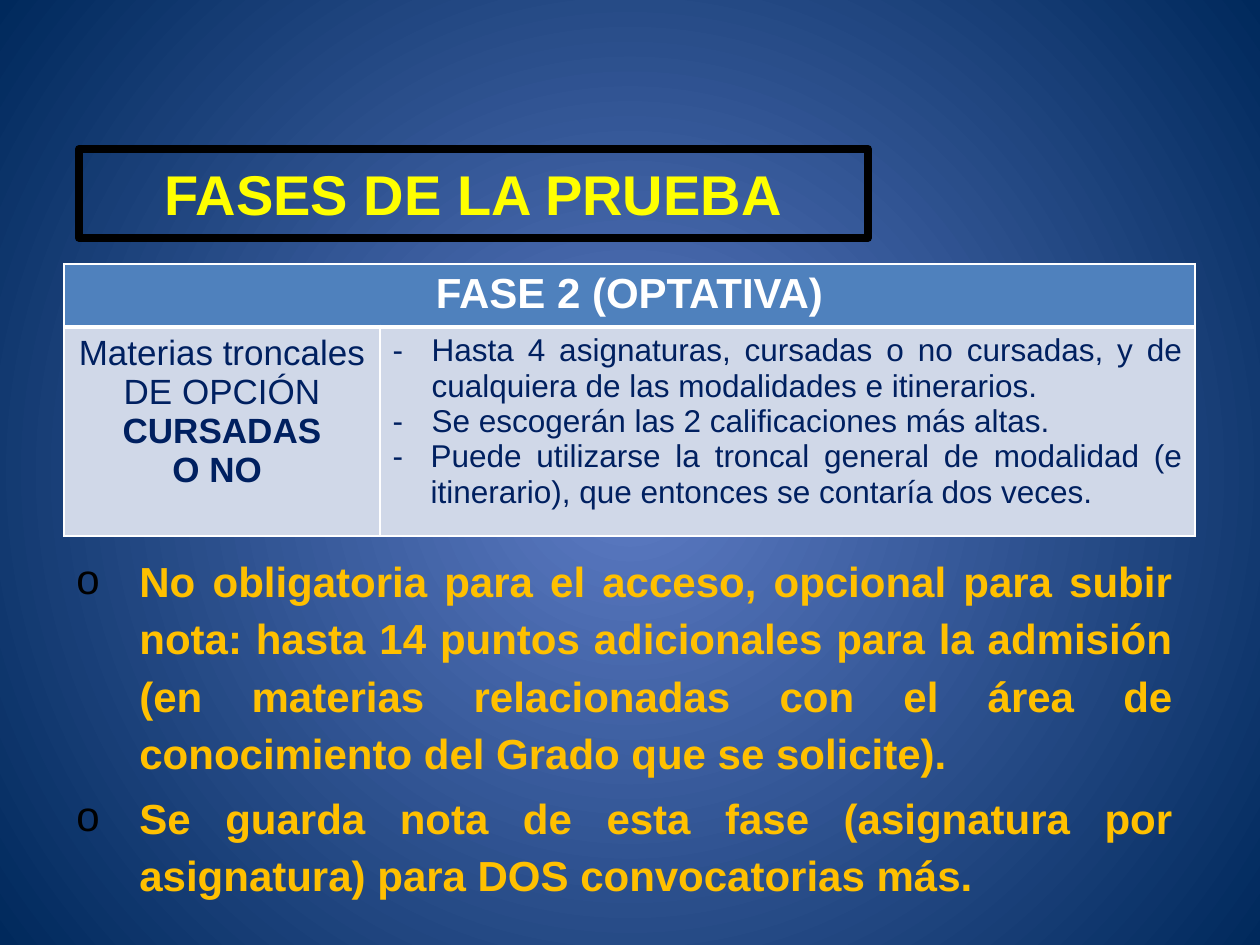
"""Build the slide on the optional second phase of the exam."""
from lxml.etree import SubElement as Sub
from pptx import Presentation
from pptx.dml.color import RGBColor as RGB
from pptx.enum.text import MSO_ANCHOR as Anchor, MSO_AUTO_SIZE as Fit, PP_ALIGN as Align
from pptx.oxml.ns import qn
from pptx.util import Pt

PX = 914400 // 126
FONT = "Arial"
HUE = {"glow": "5E7CC5", "edge": "00295C", "title": "FFFF00", "line": "000000",
       "head": "4F81BD", "cell": "D0D8E8", "white": "FFFFFF", "navy": "002060",
       "gold": "FFC000"}

TITLE = "FASES DE LA PRUEBA"
HEAD = "FASE 2 (OPTATIVA)"
TOPICS = [("Materias troncales DE OPCIÓN", False), ("CURSADAS", True), ("O NO ", True)]
RULES = [
    ("Hasta 4 asignaturas, cursadas o no cursadas, y de cualquiera de las "
     "modalidades e itinerarios.", 39),
    ("Se escogerán las 2 calificaciones más altas.", 39),
    ("Puede utilizarse la troncal general de modalidad (e itinerario), que "
     "entonces se contaría dos veces.", 38),
]
NOTES = [
    "No obligatoria para el acceso, opcional para subir nota: hasta 14 puntos "
    "adicionales para la admisión (en materias relacionadas con el área de "
    "conocimiento del Grado que se solicite).",
    "Se guarda nota de esta fase (asignatura por asignatura) para DOS "
    "convocatorias más.",
]
TITLE_BOX = (79, 149, 789, 89)
NOTE_BOX = (64, 542, 1121, 368)
LEFT, TOP = 64, 264
COLS, ROWS = (316, 815), (63, 209)


def emu(box):
    return [n * PX for n in box]


def rgb(name):
    return RGB.from_string(HUE[name])


def write(para, text, size, hue, bold, align=Align.CENTER):
    para.alignment = align
    run = para.add_run()
    run.text = text
    font = run.font
    font.name, font.size, font.bold = FONT, Pt(size), bold
    font.color.rgb = rgb(hue)


def lines(frame, count):
    return [frame.paragraphs[0]] + [frame.add_paragraph() for _ in range(count - 1)]


def bullet(para, mark, indent, hue=None):
    props = para._p.get_or_add_pPr()
    props.set("marL", str(indent * PX))
    props.set("indent", str(-indent * PX))
    if hue:
        Sub(Sub(props, qn("a:buClr")), qn("a:srgbClr"), val=HUE[hue])
    Sub(props, qn("a:buFont"), typeface=FONT)
    Sub(props, qn("a:buChar"), char=mark)


def paint(cell, hue, top, bottom):
    props = cell._tc.get_or_add_tcPr()
    for side, width in (("L", 1), ("R", 1), ("T", top), ("B", bottom)):
        line = Sub(props, qn("a:ln" + side), w=str(Pt(width)))
        Sub(Sub(line, qn("a:solidFill")), qn("a:srgbClr"), val=HUE["white"])
    cell.fill.solid()
    cell.fill.fore_color.rgb = rgb(hue)


def add_back(slide):
    fill = slide.background.fill
    fill.gradient()
    for stop, hue, place in zip(fill.gradient_stops, ("glow", "edge"), (0, 1)):
        stop.color.rgb, stop.position = rgb(hue), place
    grad = slide._element.find(".//" + qn("a:gradFill"))
    grad.remove(grad.find(qn("a:lin")))
    ring = Sub(grad, qn("a:path"), {"path": "circle"})
    Sub(ring, qn("a:fillToRect"), {side: "50000" for side in "ltrb"})


def add_title(slide):
    title = slide.shapes.title
    title.left, title.top, title.width, title.height = emu(TITLE_BOX)
    shape = Sub(title._element.spPr, qn("a:prstGeom"), prst="flowChartAlternateProcess")
    Sub(shape, qn("a:avLst"))
    title.fill.background()
    title.line.color.rgb, title.line.width = rgb("line"), Pt(4.5)
    frame = title.text_frame
    frame.auto_size, frame.vertical_anchor = Fit.NONE, Anchor.MIDDLE
    write(frame.paragraphs[0], TITLE, 32, "title", True)


def add_grid(slide):
    box = emu((LEFT, TOP, sum(COLS), sum(ROWS)))
    table = slide.shapes.add_table(len(ROWS), len(COLS), *box).table
    table.horz_banding = False
    for col, width in zip(table.columns, COLS):
        col.width = width * PX
    for row, height in zip(table.rows, ROWS):
        row.height = height * PX
    for row, look in zip(table.rows, (("head", 1, 3), ("cell", 3, 1))):
        for cell in row.cells:
            paint(cell, *look)
    head = table.cell(0, 0)
    head.merge(table.cell(0, 1))
    write(head.text_frame.paragraphs[0], HEAD, 24, "white", True)
    topic, rule = (table.cell(1, col).text_frame for col in (0, 1))
    for para, (text, bold) in zip(lines(topic, len(TOPICS)), TOPICS):
        write(para, text, 20, "navy", bold)
    for para, (text, indent) in zip(lines(rule, len(RULES)), RULES):
        write(para, text, 18, "navy", False, Align.JUSTIFY)
        bullet(para, "-", indent)


def add_notes(slide):
    frame = slide.shapes.add_textbox(*emu(NOTE_BOX)).text_frame
    frame.word_wrap = True
    for para, text in zip(lines(frame, len(NOTES)), NOTES):
        write(para, text, 24, "gold", True, Align.JUSTIFY)
        para.line_spacing = 1.14
        para.space_before = para.space_after = Pt(2)
        bullet(para, "o", 63, "line")


def main():
    deck = Presentation()
    deck.slide_width, deck.slide_height = emu((1260, 945))
    slide = deck.slides.add_slide(deck.slide_layouts[5])
    for add in (add_back, add_title, add_notes, add_grid):
        add(slide)
    deck.save("out.pptx")


if __name__ == "__main__":
    main()
